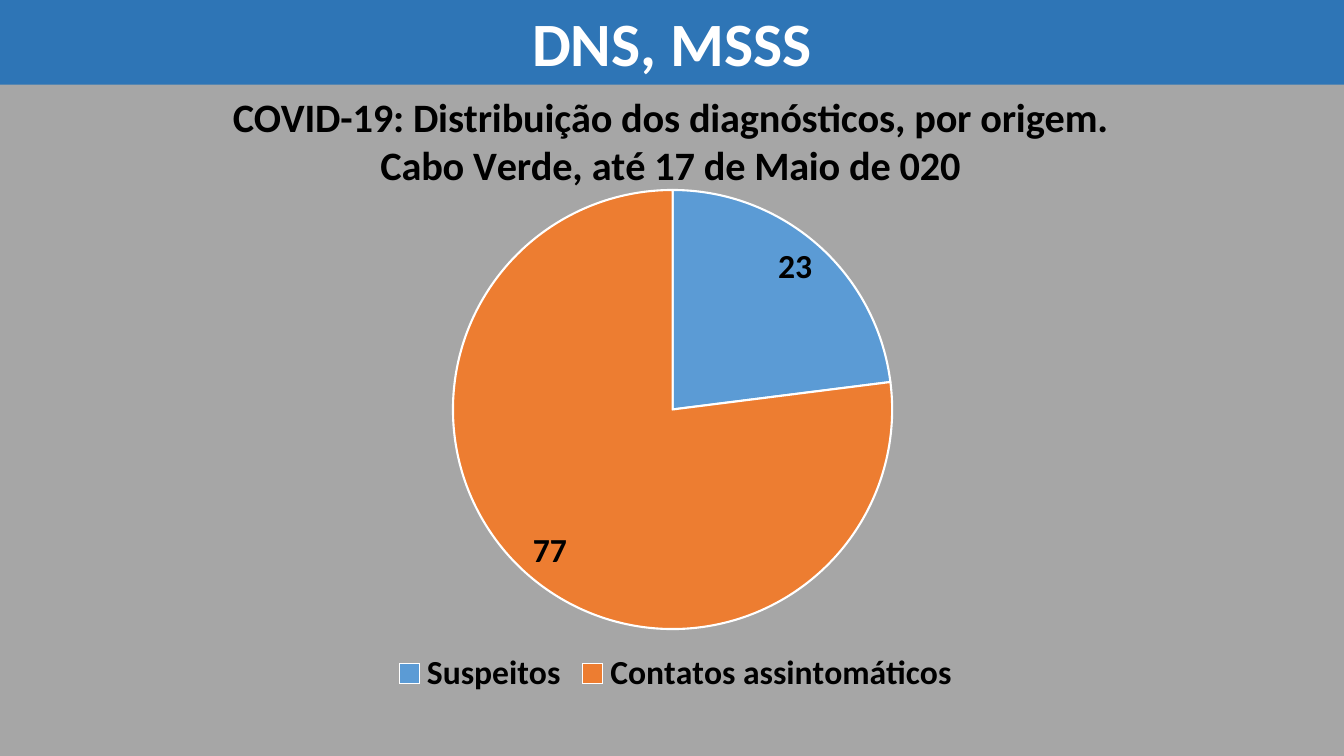
"""Build the slide showing COVID-19 diagnoses by origin as a pie chart."""
from dataclasses import dataclass

from lxml.etree import SubElement
from pptx import Presentation
from pptx.chart.chart import Chart
from pptx.chart.data import CategoryChartData
from pptx.dml.color import RGBColor
from pptx.enum.chart import XL_CHART_TYPE, XL_LABEL_POSITION, XL_LEGEND_POSITION
from pptx.enum.shapes import MSO_SHAPE
from pptx.enum.text import MSO_ANCHOR, PP_ALIGN
from pptx.oxml import parse_xml
from pptx.oxml.ns import nsdecls, qn
from pptx.slide import Slide
from pptx.text.text import Font
from pptx.util import Inches, Pt

WIDTH, HEIGHT = Inches(13.33), Inches(7.5)


@dataclass(frozen=True)
class Theme:
    font: str = "Calibri"
    background: str = "A6A6A6"
    banner: str = "2E75B6"
    light: str = "FFFFFF"
    dark: str = "000000"
    banner_size: float = 44
    title_size: float = 28.8
    chart_size: float = 24
    border: float = 1.5


@dataclass(frozen=True)
class Box:
    """Position and size as shares of the slide."""
    x: float
    y: float
    w: float
    h: float

    def emu(self) -> tuple[int, int, int, int]:
        return (int(self.x * WIDTH), int(self.y * HEIGHT),
                int(self.w * WIDTH), int(self.h * HEIGHT))


@dataclass(frozen=True)
class Slice:
    label: str
    value: int
    color: str


THEME = Theme()
BANNER = Box(0, 0, 1, 0.112)
CHART = Box(0.0593, 0.112, 0.8867, 0.8147)
TITLE_LINES = ("COVID-19: Distribuição dos diagnósticos, por origem.",
               "Cabo Verde, até 17 de Maio de 020")
SLICES = (Slice("Suspeitos", 23, "5B9BD5"),
          Slice("Contatos assintomáticos", 77, "ED7D31"))
TITLE_LAYOUT = {"xMode": "edge", "yMode": "edge", "x": 0.126, "y": 0.008}
PLOT_LAYOUT = {"layoutTarget": "inner", "xMode": "edge", "yMode": "edge",
               "x": 0.073, "y": 0.171, "w": 0.849, "h": 0.713}


def style_font(font: Font, size: float, color: str) -> None:
    font.name = THEME.font
    font.size = Pt(size)
    font.bold = True
    font.color.rgb = RGBColor.from_string(color)


def set_layout(parent, index: int, values: dict) -> None:
    for old in parent.findall(qn("c:layout")):
        parent.remove(old)
    layout = parse_xml(f"<c:layout {nsdecls('c')}><c:manualLayout/></c:layout>")
    for tag, value in values.items():
        SubElement(layout[0], qn(f"c:{tag}")).set("val", str(value))
    parent.insert(index, layout)


def add_banner(s: Slide, text: str) -> None:
    sp = s.shapes.add_shape(MSO_SHAPE.RECTANGLE, *BANNER.emu())
    sp.shadow.inherit = False
    sp.fill.solid()
    sp.fill.fore_color.rgb = RGBColor.from_string(THEME.banner)
    sp.line.fill.background()
    tf = sp.text_frame
    tf.word_wrap = True
    tf.vertical_anchor = MSO_ANCHOR.MIDDLE
    p = tf.paragraphs[0]
    p.text = text
    p.alignment = PP_ALIGN.CENTER
    style_font(p.font, THEME.banner_size, THEME.light)


def add_title(chart: Chart) -> None:
    tf = chart.chart_title.text_frame
    for i, line in enumerate(TITLE_LINES):
        p = tf.add_paragraph() if i else tf.paragraphs[0]
        p.add_run().text = line
        p.alignment = PP_ALIGN.CENTER
        style_font(p.font, THEME.title_size, THEME.dark)
    set_layout(chart.chart_title.element, 1, TITLE_LAYOUT)


def add_pie(s: Slide) -> None:
    data = CategoryChartData()
    data.categories = [item.label for item in SLICES]
    data.add_series("Series 1", [item.value for item in SLICES])
    chart = s.shapes.add_chart(XL_CHART_TYPE.PIE, *CHART.emu(), data).chart
    style_font(chart.font, THEME.chart_size, THEME.dark)
    add_title(chart)
    set_layout(chart.element.find(".//" + qn("c:plotArea")), 0, PLOT_LAYOUT)

    chart.has_legend = True
    chart.legend.position = XL_LEGEND_POSITION.BOTTOM
    chart.legend.include_in_layout = False
    style_font(chart.legend.font, THEME.chart_size, THEME.dark)

    plot = chart.plots[0]
    plot.vary_by_categories = True
    for i, item in enumerate(SLICES):
        fmt = plot.series[0].points[i].format
        fmt.fill.solid()
        fmt.fill.fore_color.rgb = RGBColor.from_string(item.color)
        fmt.line.color.rgb = RGBColor.from_string(THEME.light)
        fmt.line.width = Pt(THEME.border)
    labels = plot.series[0].data_labels
    labels.show_value = True
    labels.position = XL_LABEL_POSITION.BEST_FIT
    style_font(labels.font, THEME.chart_size, THEME.dark)


def main() -> None:
    prs = Presentation()
    prs.slide_width, prs.slide_height = WIDTH, HEIGHT
    s = prs.slides.add_slide(prs.slide_layouts[6])
    s.background.fill.solid()
    s.background.fill.fore_color.rgb = RGBColor.from_string(THEME.background)
    add_pie(s)
    add_banner(s, "DNS, MSSS")
    prs.save("out.pptx")


if __name__ == "__main__":
    main()
